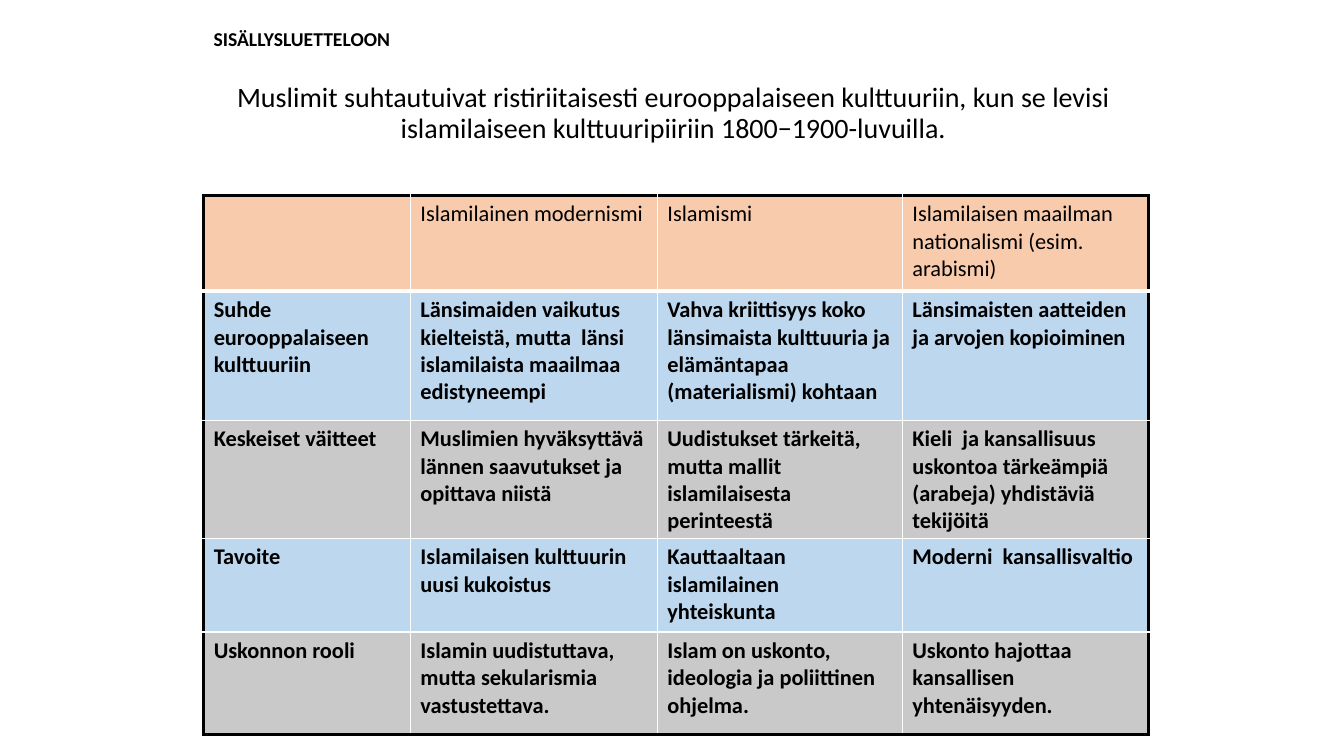
import pptx
import pptx.dml.color
import pptx.enum.text
import pptx.oxml.ns
import pptx.util
from lxml import etree

LINK = "SISÄLLYSLUETTELOON"
TITLE = ("Muslimit suhtautuivat ristiriitaisesti eurooppalaiseen kulttuuriin, "
         "kun se levisi islamilaiseen kulttuuripiiriin 1800−1900-luvuilla.")
ROWS = [
    ["", "Islamilainen modernismi", "Islamismi",
     "Islamilaisen maailman nationalismi (esim. arabismi)"],
    ["Suhde eurooppalaiseen kulttuuriin",
     "Länsimaiden vaikutus kielteistä, mutta  länsi islamilaista maailmaa edistyneempi",
     "Vahva kriittisyys koko länsimaista kulttuuria ja elämäntapaa (materialismi) kohtaan",
     "Länsimaisten aatteiden ja arvojen kopioiminen"],
    ["Keskeiset väitteet",
     "Muslimien hyväksyttävä lännen saavutukset ja opittava niistä",
     "Uudistukset tärkeitä, mutta mallit islamilaisesta perinteestä",
     "Kieli  ja kansallisuus uskontoa tärkeämpiä (arabeja) yhdistäviä tekijöitä"],
    ["Tavoite", "Islamilaisen kulttuurin uusi kukoistus",
     "Kauttaaltaan islamilainen yhteiskunta", "Moderni  kansallisvaltio"],
    ["Uskonnon rooli", "Islamin uudistuttava, mutta sekularismia vastustettava.",
     "Islam on uskonto, ideologia ja poliittinen ohjelma.",
     "Uskonto hajottaa kansallisen yhtenäisyyden."],
]
COLUMN_WIDTHS = [2.05, 2.45, 2.43, 2.44]
ROW_HEIGHTS = [0.95, 1.28, 1.17, 0.93, 1.02]
HEADER_FILL = "F8CBAD"
BAND_FILLS = ["C9C9C9", "BDD7EE"]
OUTER = ("000000", 2.25)
INNER = ("FFFFFF", 1)
UNDER_HEADER = ("FFFFFF", 3)
LEFT = 2.02
inches = pptx.util.Inches


def color(value):
    return pptx.dml.color.RGBColor.from_string(value)


def write(frame, text, size=16, bold=False, align=None, spacing=None):
    frame.word_wrap = True
    para = frame.paragraphs[0]
    para.alignment = align
    para.line_spacing = spacing
    span = para.add_run()
    span.text = text
    span.font.name = "Calibri"
    span.font.size = pptx.util.Pt(size)
    span.font.bold = bold
    span.font.color.rgb = color("000000")


def add_text_box(page, area, text, **style):
    box = page.shapes.add_textbox(*map(inches, area))
    write(box.text_frame, text, **style)
    return box


def set_borders(cell, **sides):
    """Draw each side (L, R, T, B) as a (colour, points) line."""
    properties = cell._tc.get_or_add_tcPr()
    for place, side in enumerate("LRTB"):
        shade, points = sides[side]
        line = etree.Element(pptx.oxml.ns.qn(f"a:ln{side}"), w=str(pptx.util.Pt(points)))
        fill = etree.SubElement(line, pptx.oxml.ns.qn("a:solidFill"))
        etree.SubElement(fill, pptx.oxml.ns.qn("a:srgbClr"), val=shade)
        properties.insert(place, line)


def add_comparison(page):
    last_row, last_column = len(ROWS) - 1, len(COLUMN_WIDTHS) - 1
    table = page.shapes.add_table(
        len(ROWS), len(COLUMN_WIDTHS), inches(LEFT), inches(1.94),
        inches(sum(COLUMN_WIDTHS)), inches(sum(ROW_HEIGHTS))).table
    for column, width in zip(table.columns, COLUMN_WIDTHS):
        column.width = inches(width)
    for r, texts in enumerate(ROWS):
        table.rows[r].height = inches(ROW_HEIGHTS[r])
        below = OUTER if r == last_row else INNER if r else UNDER_HEADER
        for c, text in enumerate(texts):
            cell = table.cell(r, c)
            cell.fill.solid()
            cell.fill.fore_color.rgb = color(BAND_FILLS[r % 2] if r else HEADER_FILL)
            set_borders(cell, L=INNER if c else OUTER,
                        R=OUTER if c == last_column else INNER,
                        T=INNER if r else OUTER, B=below)
            if text:
                write(cell.text_frame, text, bold=r > 0)


def main():
    deck = pptx.Presentation()
    deck.slide_width, deck.slide_height = inches(13.33), inches(7.5)
    page = deck.slides.add_slide(deck.slide_layouts[6])
    title = add_text_box(page, (2.18, 0.56, 9, 1.14), TITLE, size=20, spacing=0.9,
                         align=pptx.enum.text.PP_ALIGN.CENTER)
    title.text_frame.vertical_anchor = pptx.enum.text.MSO_ANCHOR.MIDDLE
    add_comparison(page)
    link = add_text_box(page, (LEFT, 0.22, 1.97, 0.34), LINK, size=14, bold=True)
    link.text_frame.word_wrap = False
    deck.save("out.pptx")


if __name__ == "__main__":
    main()
